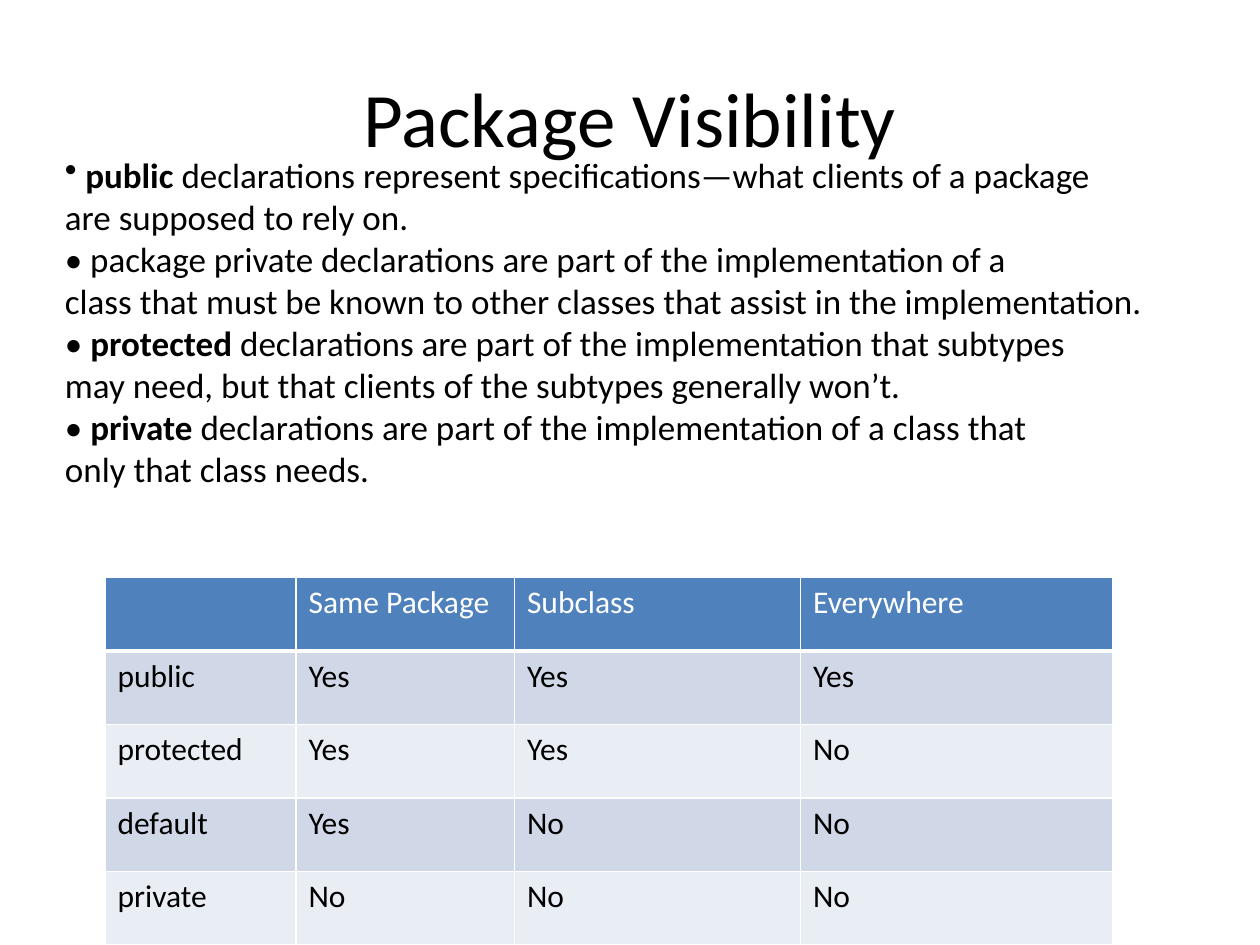
from lxml.etree import SubElement
from pptx import Presentation
from pptx.dml.color import RGBColor
from pptx.enum.text import MSO_ANCHOR, PP_ALIGN
from pptx.oxml.ns import qn
from pptx.util import Pt

COLORS = {"ink": "000000", "white": "FFFFFF", "head": "4F81BD",
          "odd": "D0D8E8", "even": "E9EDF4"}
FONT = "Calibri"
TITLE = "Package Visibility"
# Each line is (lead, bold keyword, rest).
LINES = [
    (" ", "public", " declarations represent specifications—what clients of a package"),
    ("are supposed to rely on.", "", ""),
    ("• package private declarations are part of the implementation of a", "", ""),
    ("class that must be known to other classes that assist in the implementation.", "", ""),
    ("• ", "protected", " declarations are part of the implementation that subtypes"),
    ("may need, but that clients of the subtypes generally won’t.", "", ""),
    ("• ", "private", " declarations are part of the implementation of a class that"),
    ("only that class needs.", "", ""),
]
ROWS = [
    ("", "Same Package", "Subclass", "Everywhere"),
    ("public", "Yes", "Yes", "Yes"),
    ("protected", "Yes", "Yes", "No"),
    ("default", "Yes", "No", "No"),
    ("private", "No", "No", "No"),
]
WIDTHS = (109.2, 124.8, 163.5, 178.5)
HEIGHT = 42


def rgb(name):
    return RGBColor.from_string(COLORS[name])


def style(para, size, color="ink"):
    font = para.font
    font.name, font.size = FONT, Pt(size)
    font.color.rgb = rgb(color)


def add_box(slide, left, top, width, height):
    box = slide.shapes.add_textbox(Pt(left), Pt(top), Pt(width), Pt(height))
    box.text_frame.word_wrap = True
    return box.text_frame


def add_title(slide):
    frame = add_box(slide, 36, 21.6, 648, 90)
    frame.vertical_anchor = MSO_ANCHOR.MIDDLE
    para = frame.paragraphs[0]
    para.text, para.alignment = TITLE, PP_ALIGN.CENTER
    style(para, 44)


def add_body(slide):
    frame = add_box(slide, 30, 84, 666, 225.6)
    for i, parts in enumerate(LINES):
        para = frame.add_paragraph() if i else frame.paragraphs[0]
        style(para, 20)
        for j, text in enumerate(parts):
            if text:
                run = para.add_run()
                run.text = text
                if j == 1:
                    run.font.bold = True
    props = frame.paragraphs[0]._p.get_or_add_pPr()
    bullet = props.makeelement(qn("a:buChar"), {"char": "•"})
    props.insert(0, bullet)


def add_rules(cell, foot):
    """Draw white cell borders, the bottom one foot points wide."""
    props = cell._tc.get_or_add_tcPr()
    for side, size in (("L", 1), ("R", 1), ("T", 1), ("B", foot)):
        line = SubElement(props, qn(f"a:ln{side}"), w=str(Pt(size)))
        fill = SubElement(line, qn("a:solidFill"))
        SubElement(fill, qn("a:srgbClr"), val=COLORS["white"])


def add_grid(slide):
    frame = slide.shapes.add_table(len(ROWS), len(WIDTHS), Pt(60), Pt(330),
                                   Pt(sum(WIDTHS)), Pt(HEIGHT * len(ROWS)))
    table = frame.table
    for col, width in zip(table.columns, WIDTHS):
        col.width = Pt(width)
    for i, row in enumerate(ROWS):
        table.rows[i].height = Pt(HEIGHT)
        shade = ("odd" if i % 2 else "even") if i else "head"
        for j, text in enumerate(row):
            cell = table.cell(i, j)
            add_rules(cell, 1 if i else 3)
            cell.fill.solid()
            cell.fill.fore_color.rgb = rgb(shade)
            para = cell.text_frame.paragraphs[0]
            para.text = text
            style(para, 18, "ink" if i else "white")
            para.font.bold = False


def main():
    deck = Presentation()
    deck.slide_width, deck.slide_height = Pt(720), Pt(540)
    slide = deck.slides.add_slide(deck.slide_layouts[6])
    add_title(slide)
    add_grid(slide)
    add_body(slide)
    deck.save("out.pptx")


if __name__ == "__main__":
    main()
